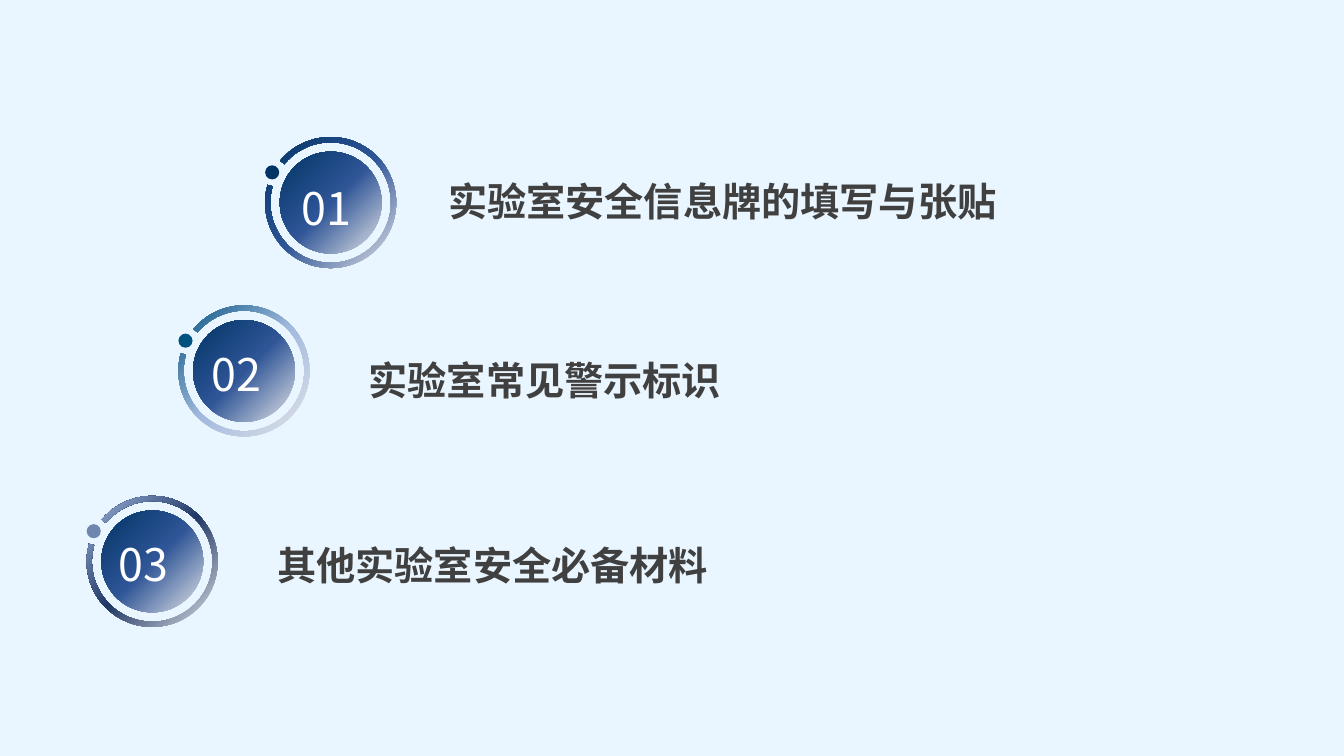
"""Build an agenda slide with three numbered ring badges and headings."""
from pptx import Presentation
from pptx.dml.color import RGBColor
from pptx.enum.shapes import MSO_SHAPE as SHAPE
from pptx.enum.text import MSO_AUTO_SIZE as FIT, PP_ALIGN as ALIGN
from pptx.oxml import parse_xml
from pptx.oxml.ns import nsdecls, qn
from pptx.util import Inches, Pt

FONT = "Noto Sans CJK SC"
DISC_COLORS = ("003464", "2F5597", "E2E3E7")
RING, DISC, DOT = 1.3, 1.01, 0.14
INSET = (RING - DISC) / 2
GAP_START, GAP_END = 195.6, 219.7
DEGREE = 60000 / 100000


def add_shape(kind, x, y, w, h, colors):
    sp = s.shapes.add_shape(kind, Inches(x), Inches(y), Inches(w), Inches(h))
    sp.shadow.inherit = False
    sp.line.fill.background()
    sp.fill.solid()
    sp.fill.fore_color.rgb = RGBColor.from_string(colors[0])
    if len(colors) > 1:
        stops = "".join(
            f'<a:gs pos="{i * 50000}"><a:srgbClr val="{c}"/></a:gs>' for i, c in enumerate(colors))
        gradient = parse_xml(
            f'<a:gradFill {nsdecls("a")} rotWithShape="1"><a:gsLst>{stops}</a:gsLst>'
            '<a:path path="circle"><a:fillToRect r="100000" b="100000"/></a:path></a:gradFill>')
        spPr = sp._element.spPr
        spPr.replace(spPr.find(qn("a:solidFill")), gradient)
    return sp


def add_text(text, x, y, w, h, size, color, bold, align):
    tf = s.shapes.add_textbox(Inches(x), Inches(y), Inches(w), Inches(h)).text_frame
    tf.word_wrap = True
    tf.auto_size = FIT.SHAPE_TO_FIT_TEXT
    tf.text = text
    p = tf.paragraphs[0]
    p.alignment = align
    r = p.runs[0]
    r.font.size, r.font.bold, r.font.name = Pt(size), bold, FONT
    r.font.color.rgb = RGBColor.from_string(color)
    r._r.get_or_add_rPr().append(parse_xml(f'<a:ea {nsdecls("a")} typeface="{FONT}"/>'))


prs = Presentation()
prs.slide_width, prs.slide_height = Inches(13.33), Inches(7.5)
s = prs.slides.add_slide(prs.slide_layouts[6])

backdrop = add_shape(SHAPE.RECTANGLE, 0, 0, 13.33, 7.5, ["BAE4FF"])
tint = backdrop._element.spPr.find(qn("a:solidFill"))[0]
tint.append(parse_xml(f'<a:alpha {nsdecls("a")} val="30000"/>'))

agenda = [
    ("01", 2.63, 1.36, DISC_COLORS, "003464", (2.89, 1.74),
     "实验室安全信息牌的填写与张贴", (3.94, 1.71, 6.04)),
    ("02", 1.77, 3.03, ("01527F", "A1B9DE", "E2E3E7"), "01527F", (2, 3.39),
     "实验室常见警示标识", (3.15, 3.49, 4.1)),
    ("03", 0.86, 4.92, ("A1B9DE", "203864", "E2E3E7"), "6F87AF", (1.08, 5.28),
     "其他实验室安全必备材料", (1.17, 5.32, 5.95)),
]
for number, x, y, ring_colors, dot_color, number_at, heading, heading_at in agenda:
    ring = add_shape(SHAPE.BLOCK_ARC, x, y, RING, RING, ring_colors)
    ring.adjustments[0] = GAP_END * DEGREE
    ring.adjustments[1] = GAP_START * DEGREE
    ring.adjustments[2] = 0.04
    add_shape(SHAPE.OVAL, x + INSET, y + INSET, DISC, DISC, DISC_COLORS)
    add_shape(SHAPE.OVAL, x, y + 2 * DOT, DOT, DOT, [dot_color])
    add_text(number, *number_at, 0.88, 0.64, 32, "FFFFFF", False, ALIGN.LEFT)
    add_text(heading, *heading_at, 0.57, 28, "404040", True, ALIGN.RIGHT)

prs.save("out.pptx")
